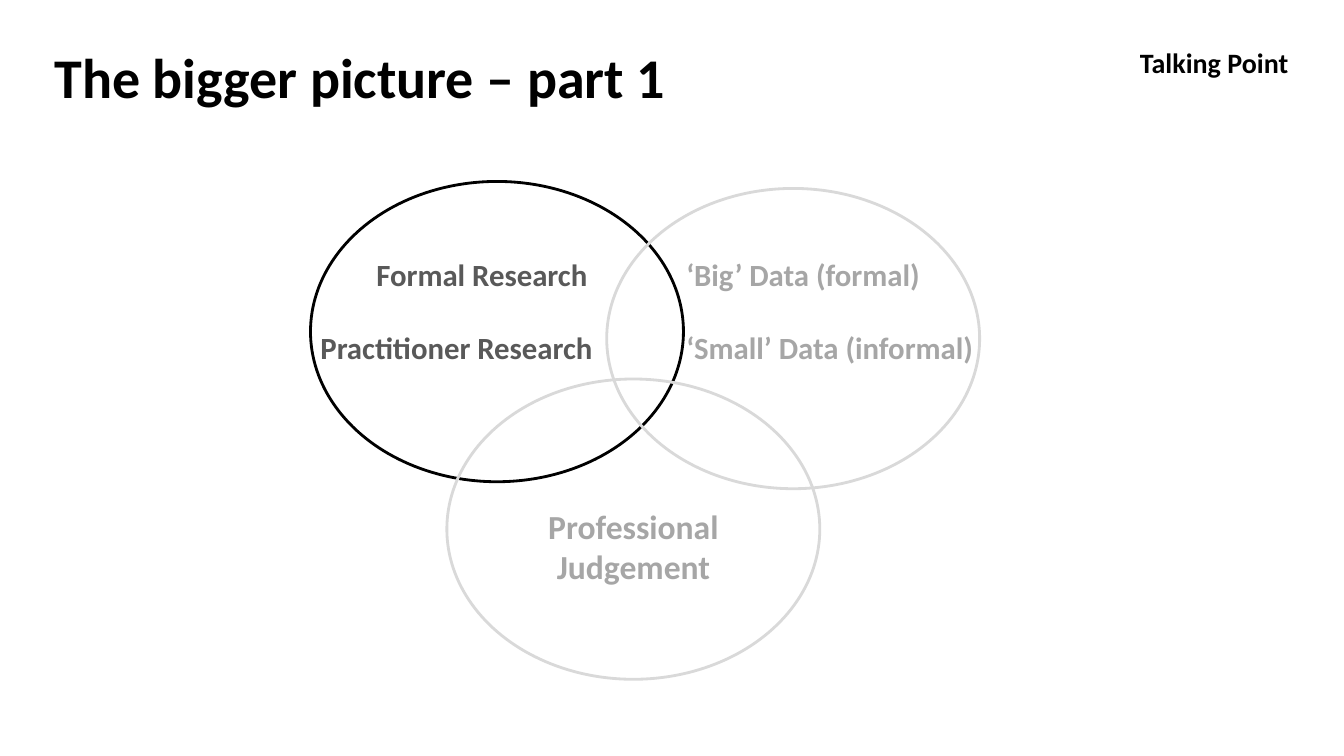
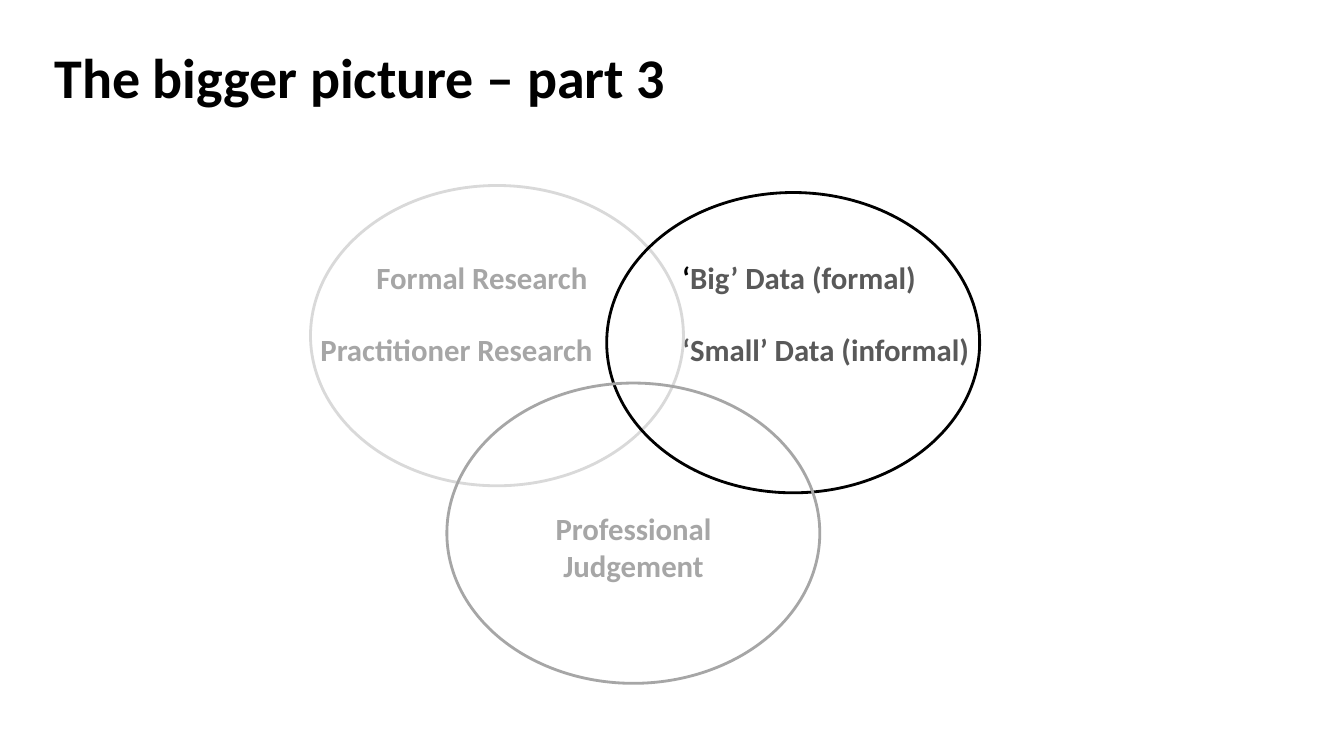
from pptx import Presentation
from pptx import util as u
from pptx.dml.color import RGBColor
from pptx.enum import shapes, text

Pt = u.Pt
BLACK = RGBColor(0x00, 0x00, 0x00)
DARK_GREY = RGBColor(0x59, 0x59, 0x59)
MID_GREY = RGBColor(0xA6, 0xA6, 0xA6)
PALE_GREY = RGBColor(0xD9, 0xD9, 0xD9)

BASE_FONT = {"name": "Calibri", "bold": True}
LABEL_SIZE = 22
LABEL_GAP = 25.5
CIRCLE_SIZE = (266.4, 214.5)
CIRCLE_SPOTS = [(221.8, 129.6), (433.4, 134.6), (319.2, 270.7)]
LEFT, CENTRE = text.PP_ALIGN.LEFT, text.PP_ALIGN.CENTER


def add_runs(paragraph, runs, size):
    for words, colour in runs:
        run = paragraph.add_run()
        run.text = words
        for key, value in {**BASE_FONT, "size": Pt(size)}.items():
            setattr(run.font, key, value)
        run.font.color.rgb = colour


def add_title(slide, words):
    title = slide.shapes.title
    place = {"left": 31.7, "top": 36.7, "width": 640.8, "height": 36}
    for key, value in place.items():
        setattr(title, key, Pt(value))
    frame = title.text_frame
    frame_format = {
        "auto_size": text.MSO_AUTO_SIZE.NONE,
        "vertical_anchor": text.MSO_ANCHOR.MIDDLE,
        "word_wrap": True,
    }
    for key, value in frame_format.items():
        setattr(frame, key, value)
    frame.paragraphs[0].alignment = LEFT
    add_runs(frame.paragraphs[0], [(words, BLACK)], 40)


def add_label(slide, place, lines, size=LABEL_SIZE, wrap=True):
    frame = slide.shapes.add_textbox(*map(Pt, place)).text_frame
    frame.word_wrap = wrap
    for index, (runs, alignment) in enumerate(lines):
        paragraph = frame.add_paragraph() if index else frame.paragraphs[0]
        paragraph.alignment = alignment
        paragraph.space_before = Pt(LABEL_GAP if index else 0)
        add_runs(paragraph, runs, size)


def add_circle(slide, left, top, colour):
    circle = slide.shapes.add_shape(
        shapes.MSO_SHAPE.OVAL, *map(Pt, (left, top, *CIRCLE_SIZE)))
    circle.shadow.inherit = False
    circle.fill.background()
    circle.line.color.rgb = colour
    circle.line.width = Pt(2)


def add_venn(slide, circle_colours, research_colour, data_colour, quote_colour,
             data_left, judgement_size, label_drop=0, circle_drop=0):
    label_top = 179.4 + label_drop
    add_label(slide, (221.8, label_top, 244.8, 131), [
        ([("Formal Research", research_colour)], CENTRE),
        ([("Practitioner Research", research_colour)], LEFT),
    ])
    add_label(slide, (data_left, label_top, 244.1, 131), [
        ([("‘", quote_colour), ("Big’ Data (formal)", data_colour)], LEFT),
        ([("‘Small’ Data (informal)", data_colour)], LEFT),
    ])
    add_label(slide, (360, 357.8 + circle_drop, 185, 65),
              [([("Professional Judgement", MID_GREY)], CENTRE)], judgement_size)
    for (left, top), colour in zip(CIRCLE_SPOTS, circle_colours):
        add_circle(slide, left, top + circle_drop, colour)


def add_titled_slide(deck, words):
    slide = deck.slides.add_slide(deck.slide_layouts[5])
    add_title(slide, words)
    return slide


def main():
    deck = Presentation()
    deck.slide_width, deck.slide_height = Pt(960), Pt(540)

    research = add_titled_slide(deck, "The bigger picture – part 1")
    add_venn(research, (BLACK, PALE_GREY, PALE_GREY), DARK_GREY, MID_GREY,
             MID_GREY, data_left=483.1, judgement_size=24)
    add_label(research, (807.1, 28.8, 121, 31.5),
              [([("Talking Point", BLACK)], LEFT)], size=20, wrap=False)

    data = add_titled_slide(deck, "The bigger picture – part 3")
    add_venn(data, (PALE_GREY, BLACK, MID_GREY), MID_GREY, DARK_GREY,
             BLACK, data_left=480.2, judgement_size=LABEL_SIZE,
             label_drop=1.5, circle_drop=2.9)

    deck.save("out.pptx")


if __name__ == "__main__":
    main()
